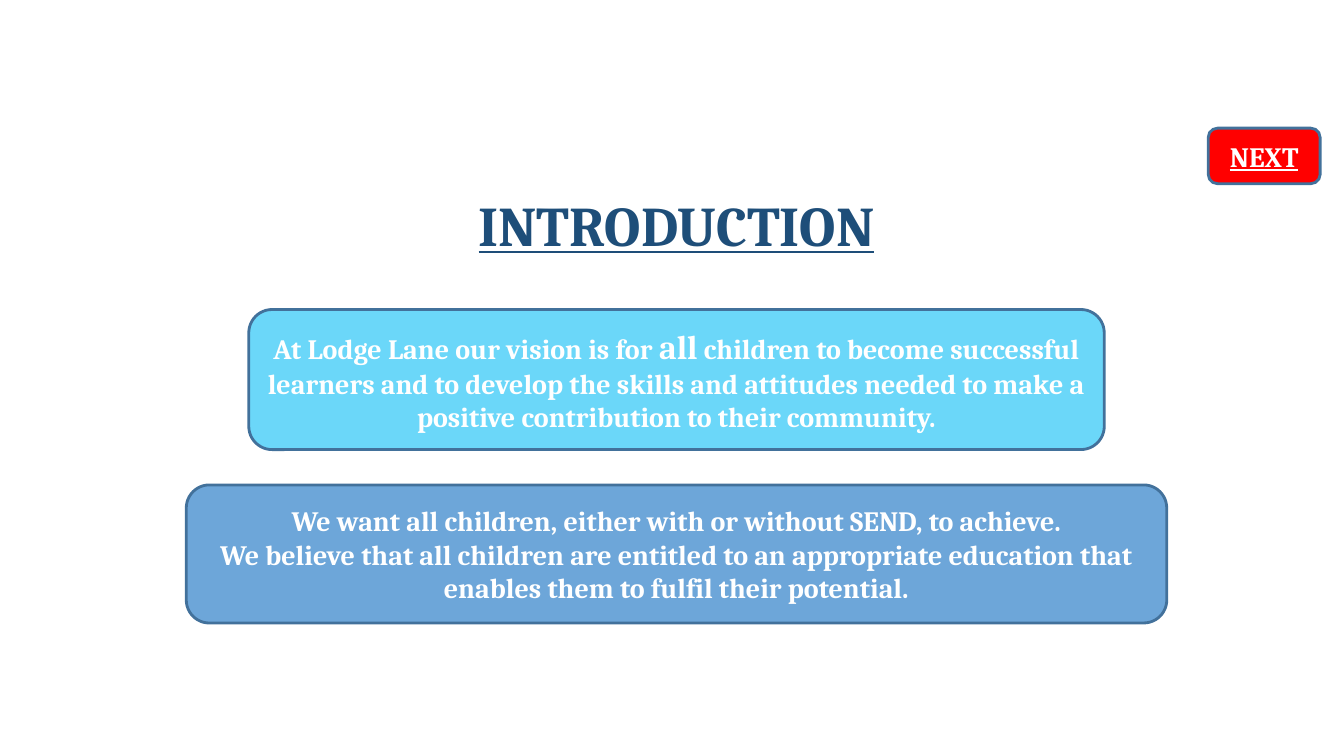
from pptx import Presentation
from pptx.dml.color import RGBColor
from pptx.enum.shapes import MSO_SHAPE
from pptx.enum.text import MSO_ANCHOR, PP_ALIGN
from pptx.util import Cm, Pt

FONT = "Cambria"
NAVY, OUTLINE, WHITE = "1E4E79", "42719B", "FFFFFF"
SKY, BLUE, RED = "6BD7F9", "6DA6D9", "FF0000"
CENTRE = 17.05  # shared axis of the title and both statements, in cm

VISION = [
    [
        ("At Lodge Lane our vision is for ", 20),
        ("all", 24),
        (" children to become successful learners and to develop the skills and "
         "attitudes needed to make a positive contribution to their community.", 20),
    ]
]
AIMS = [
    [("We want all children, either with or without SEND, to achieve.", 20)],
    [("We believe that all children are entitled to an appropriate education "
      "that enables them to fulfil their potential.", 20)],
]


def colour(value):
    return RGBColor.from_string(value)


def centred(top, width, height):
    """Return a box (left, top, width, height) in cm around the shared axis."""
    return CENTRE - width / 2, top, width, height


def write(shape, paragraphs, text_colour, underline=False):
    """Fill a shape with centred bold paragraphs, each a list of (text, size)."""
    frame = shape.text_frame
    frame.word_wrap = True
    frame.vertical_anchor = MSO_ANCHOR.MIDDLE
    for index, spans in enumerate(paragraphs):
        paragraph = frame.add_paragraph() if index else frame.paragraphs[0]
        paragraph.alignment = PP_ALIGN.CENTER
        for text, size in spans:
            span = paragraph.add_run()
            span.text = text
            span.font.name = FONT
            span.font.size = Pt(size)
            span.font.bold = True
            span.font.underline = underline
            span.font.color.rgb = colour(text_colour)


def add_heading(page, box, text):
    title = page.shapes.title
    title.left, title.top, title.width, title.height = map(Cm, box)
    write(title, [[(text, 40)]], NAVY, underline=True)
    title.text_frame.paragraphs[0].line_spacing = 0.9


def add_panel(page, box, paragraphs, fill, underline=False):
    panel = page.shapes.add_shape(MSO_SHAPE.ROUNDED_RECTANGLE, *map(Cm, box))
    panel.shadow.inherit = False
    panel.fill.solid()
    panel.fill.fore_color.rgb = colour(fill)
    panel.line.color.rgb = colour(OUTLINE)
    panel.line.width = Pt(2)
    write(panel, paragraphs, WHITE, underline)


def main():
    deck = Presentation()
    deck.slide_width, deck.slide_height = Cm(33.87), Cm(19.05)
    page = deck.slides.add_slide(deck.slide_layouts[5])
    add_heading(page, centred(3.91, 29.21, 3.68), "INTRODUCTION")
    add_panel(page, centred(7.8, 21.56, 3.53), VISION, SKY)
    add_panel(page, centred(12.22, 24.71, 3.48), AIMS, BLUE)
    add_panel(page, (30.45, 3.23, 2.82, 1.4), [[("NEXT", 20)]], RED, underline=True)
    deck.save("out.pptx")


if __name__ == "__main__":
    main()
